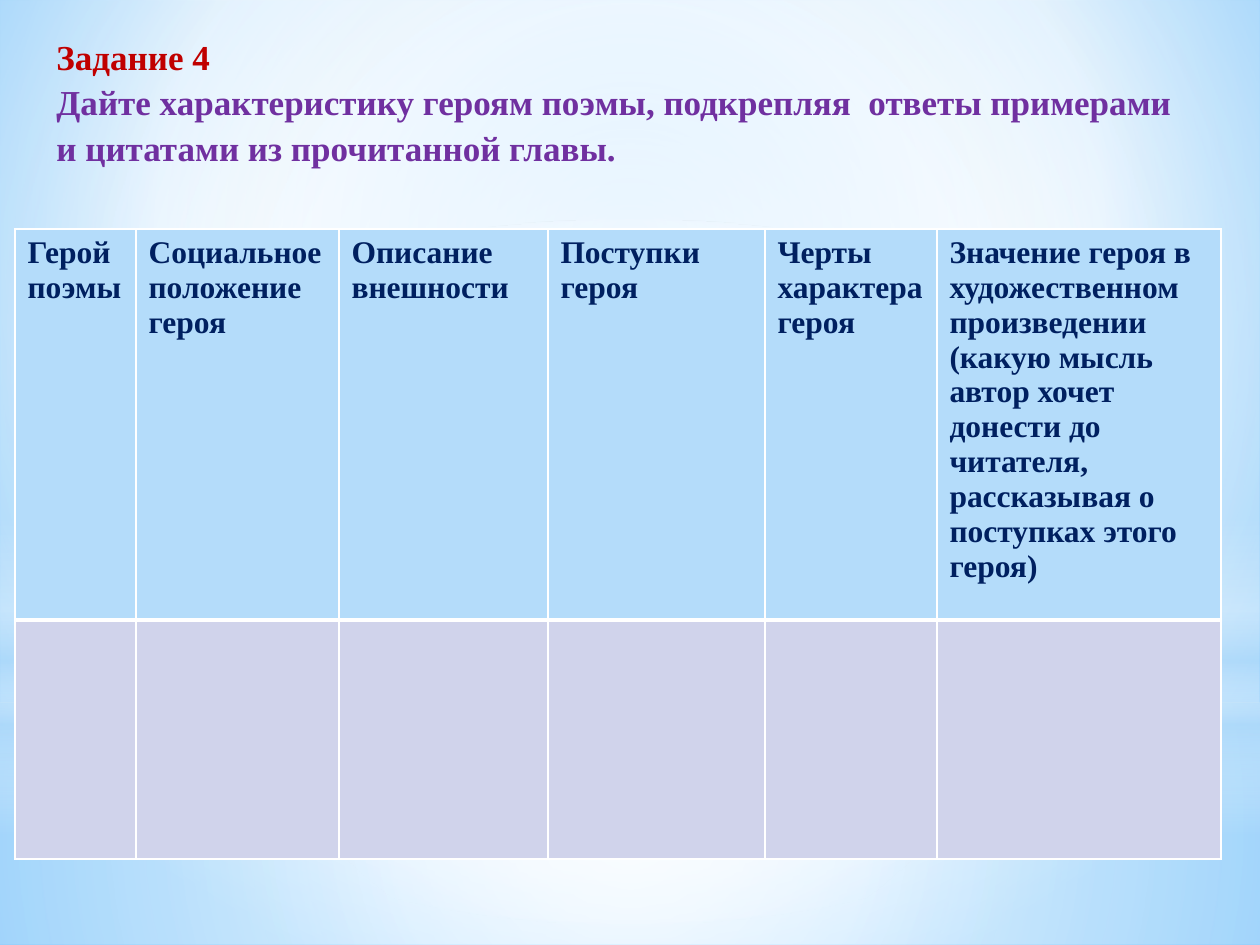
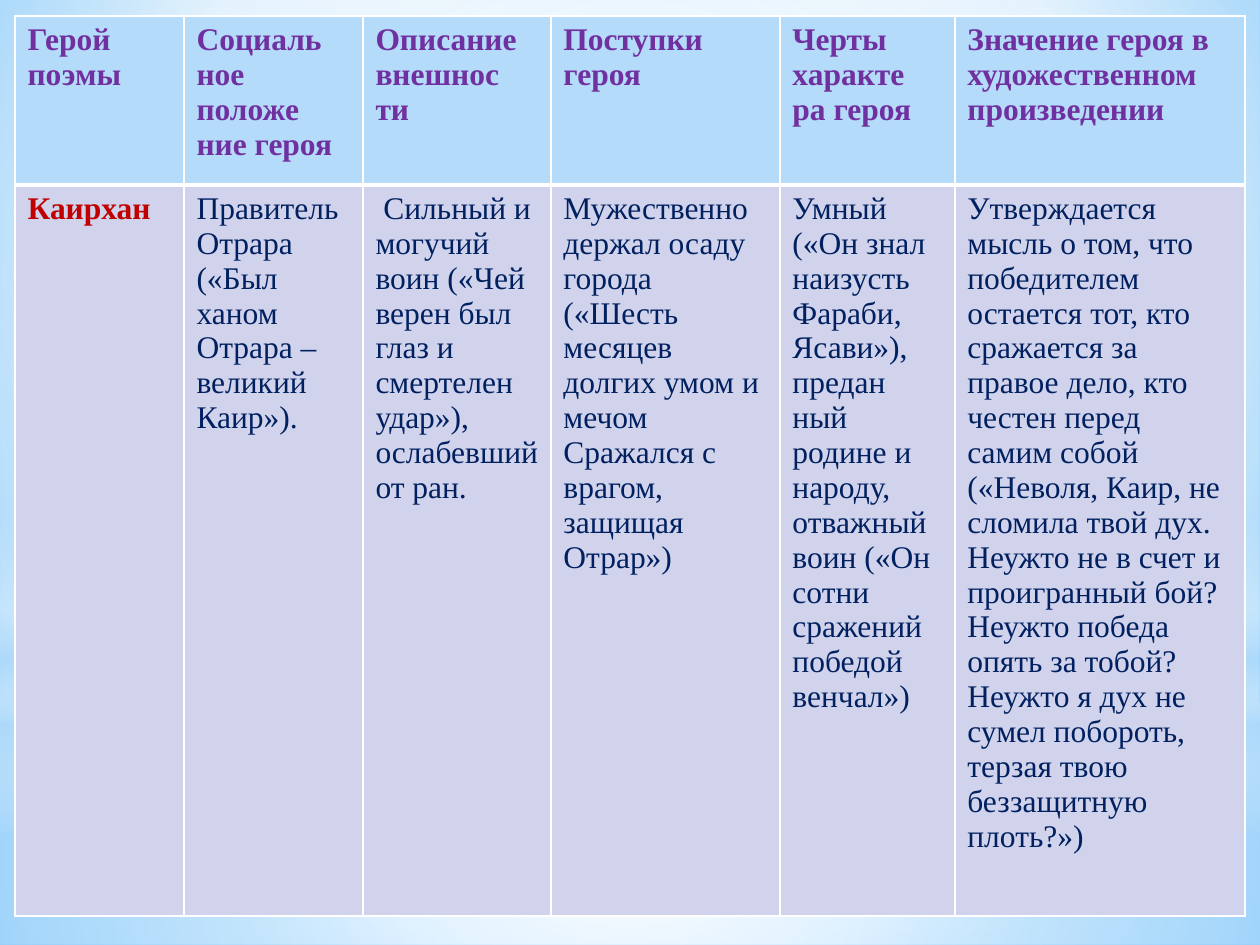
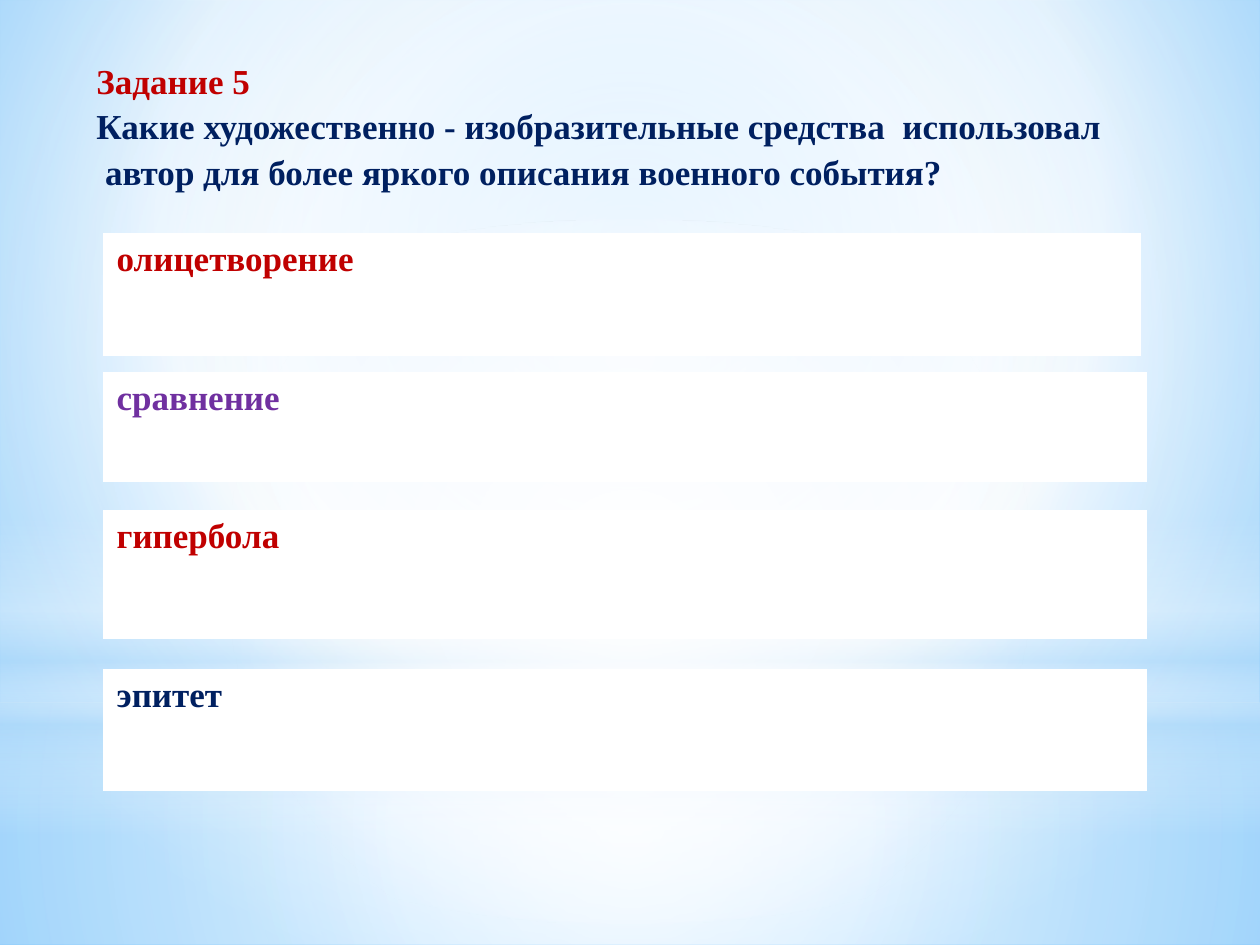
from dataclasses import dataclass
from typing import Optional

from lxml import etree
from pptx import Presentation
from pptx import util as u
from pptx.dml.color import RGBColor
from pptx.enum import shapes
from pptx.oxml import ns

PX_PER_INCH = 126


@dataclass(frozen=True)
class Theme:
    font: str = "Times New Roman"
    red: str = "C00000"
    purple: str = "7030A0"
    navy: str = "002060"
    white: str = "FFFFFF"
    sky: str = "B4DCFA"
    lilac: str = "D0D3EB"
    edge_blue: str = "9ED5FF"
    deep_blue: str = "5BB9FF"
    heading_size: int = 20
    cell_size: int = 18
    heading_spacing: float = 1.08
    thin: int = 1
    thick: int = 3


THEME = Theme()


@dataclass(frozen=True)
class Area:
    left: int
    top: int
    width: int
    height: int

    def emu(self) -> tuple[int, ...]:
        return tuple(px(n) for n in (self.left, self.top, self.width, self.height))


@dataclass(frozen=True)
class Stop:
    position: int
    color: str
    opacity: int = 100


@dataclass(frozen=True)
class Gradient:
    """A circular gradient around a focus (l, t, r, b in percent), or a vertical one."""
    stops: tuple[Stop, ...]
    focus: Optional[tuple[int, int, int, int]] = (50, 50, 50, 50)


@dataclass(frozen=True)
class Glow:
    kind: shapes.MSO_SHAPE
    area: Area
    gradient: Gradient


@dataclass(frozen=True)
class Passage:
    """Text in one style; each line is a paragraph."""
    words: str
    color: str
    bold: bool = True


@dataclass(frozen=True)
class Device:
    """A literary device with an empty field for the answer."""
    name: str
    color: str
    top: int
    height: int
    columns: tuple[int, int] = (521, 521)


WHITE, SKY = THEME.white, THEME.sky

BACKDROP = Gradient(
    (Stop(0, THEME.edge_blue), Stop(60, WHITE), Stop(100, THEME.deep_blue)),
    (20, 10, 20, 60))

GLOWS = (
    Glow(shapes.MSO_SHAPE.RECTANGLE, Area(0, 703, 1260, 242),
         Gradient((Stop(0, WHITE, 91), Stop(37, WHITE, 76), Stop(100, SKY, 79)))),
    Glow(shapes.MSO_SHAPE.RECTANGLE, Area(0, 0, 1260, 703),
         Gradient((Stop(0, WHITE, 89), Stop(48, WHITE, 62), Stop(100, SKY, 79)))),
    Glow(shapes.MSO_SHAPE.RECTANGLE, Area(0, 519, 1260, 315),
         Gradient((Stop(0, WHITE, 0), Stop(29, WHITE, 30), Stop(45, SKY, 40),
                   Stop(55, WHITE, 26), Stop(65, SKY, 60), Stop(100, WHITE, 0)), None)),
    Glow(shapes.MSO_SHAPE.OVAL, Area(0, 220, 1260, 703),
         Gradient((Stop(0, WHITE), Stop(56, WHITE, 0)))),
)

TASK_HEADERS = (
    "Герой поэмы",
    "Социальное положение героя",
    "Описание внешности",
    "Поступки героя",
    "Черты характера героя",
    "Значение героя в художественном произведении (какую мысль автор хочет "
    "донести до читателя, рассказывая о поступках этого героя)",
)

ANSWER_HEADERS = (
    "Герой поэмы",
    "Социаль\nное положе\nние героя",
    "Описание внешнос\nти",
    "Поступки героя",
    "Черты характе\nра героя",
    "Значение героя в художественном произведении",
)

HERO = "Каирхан"
HERO_ANSWERS = (
    "Правитель Отрара («Был ханом Отрара – великий Каир»).",
    " Сильный и могучий воин («Чей верен был глаз и смертелен удар»), "
    "ослабевший от ран.",
    "Мужественно держал осаду города («Шесть месяцев долгих умом и мечом "
    "Сражался с врагом, защищая Отрар»)",
    "Умный («Он знал наизусть Фараби, Ясави»), предан\n"
    "ный родине и народу, отважный воин («Он сотни сражений победой венчал»)",
    "Утверждается мысль о том, что победителем остается тот, кто сражается за "
    "правое дело, кто честен перед самим собой («Неволя, Каир, не сломила твой "
    "дух. Неужто не в счет и проигранный бой? Неужто победа опять за тобой? "
    "Неужто я дух не сумел побороть, терзая твою беззащитную плоть?»)",
)

DEVICES = (
    Device("олицетворение", THEME.red, 234, 120, (533, 503)),
    Device("сравнение", THEME.purple, 373, 107),
    Device("гипербола", THEME.red, 511, 126),
    Device("эпитет", THEME.navy, 670, 119),
)


def px(length: int) -> int:
    return round(length * u.Inches(1) / PX_PER_INCH)


def add_child(parent, tag: str, **attributes):
    return etree.SubElement(parent, ns.qn(tag),
                            {key: str(value) for key, value in attributes.items()})


def paint_gradient(holder, gradient: Gradient) -> None:
    """Replace the solid fill inside holder by the gradient."""
    fill = etree.Element(ns.qn("a:gradFill"), rotWithShape="1")
    stops = add_child(fill, "a:gsLst")
    for stop in gradient.stops:
        mark = add_child(stops, "a:gs", pos=stop.position * 1000)
        color = add_child(mark, "a:srgbClr", val=stop.color)
        if stop.opacity < 100:
            add_child(color, "a:alpha", val=stop.opacity * 1000)
    if gradient.focus:
        course = add_child(fill, "a:path", path="circle")
        sides = {side: part * 1000 for side, part in zip("ltrb", gradient.focus)}
        add_child(course, "a:fillToRect", **sides)
    else:
        add_child(fill, "a:lin", ang=90 * 60000, scaled=0)
    holder.replace(holder.find(ns.qn("a:solidFill")), fill)


def prepare_layout(deck):
    """Give the blank layout the backdrop and its glows."""
    layout = deck.slide_layouts[6]
    for placeholder in list(layout.placeholders):
        layout.element.cSld.spTree.remove(placeholder.element)
    layout.background.fill.solid()
    paint_gradient(layout.element.find(f".//{ns.qn('p:bgPr')}"), BACKDROP)
    return layout


def add_glows(page, layout) -> None:
    """Draw the glows on a page and hand them over to the layout."""
    for glow in GLOWS:
        shape = page.shapes.add_shape(glow.kind, *glow.area.emu())
        shape.shadow.inherit = False
        shape.line.fill.background()
        shape.fill.solid()
        paint_gradient(shape.element.spPr, glow.gradient)
        layout.element.cSld.spTree.append(shape.element)


def write(frame, passages: tuple[Passage, ...], size: int,
          spacing: Optional[float] = None) -> None:
    frame.word_wrap = True
    lines = [(line, passage) for passage in passages
             for line in passage.words.split("\n")]
    for index, (line, passage) in enumerate(lines):
        para = frame.add_paragraph() if index else frame.paragraphs[0]
        if spacing:
            para.line_spacing = spacing
        span = para.add_run()
        span.text = line
        span.font.name = THEME.font
        span.font.size = u.Pt(size)
        span.font.bold = passage.bold
        span.font.color.rgb = RGBColor.from_string(passage.color)


def add_heading(page, area: Area, *passages: Passage) -> None:
    box = page.shapes.add_textbox(*area.emu())
    write(box.text_frame, passages, THEME.heading_size, THEME.heading_spacing)


def add_borders(cell, is_header: bool) -> None:
    """Thin white borders, with a thick one under the header."""
    widths = {"L": THEME.thin, "R": THEME.thin}
    if is_header:
        widths["T"] = THEME.thin
    widths["B"] = THEME.thick if is_header else THEME.thin
    properties = cell._tc.get_or_add_tcPr()
    for side, width in widths.items():
        line = add_child(properties, f"a:ln{side}", w=u.Pt(width))
        add_child(add_child(line, "a:solidFill"), "a:srgbClr", val=THEME.white)


def add_grid(page, left: int, top: int, columns: tuple[int, ...],
             heights: tuple[int, ...], rows: tuple[tuple[Optional[Passage], ...], ...],
             fills: tuple[str, ...], size: int) -> None:
    area = Area(left, top, sum(columns), sum(heights))
    table = page.shapes.add_table(len(heights), len(columns), *area.emu()).table
    table.horz_banding = False
    for column, width in zip(table.columns, columns):
        column.width = px(width)
    for index, (row, height) in enumerate(zip(table.rows, heights)):
        row.height = px(height)
        for cell, passage in zip(row.cells, rows[index]):
            add_borders(cell, index == 0)
            cell.fill.solid()
            cell.fill.fore_color.rgb = RGBColor.from_string(fills[index])
            if passage:
                write(cell.text_frame, (passage,), size)


def add_hero_table(page, top: int, columns: tuple[int, ...], heights: tuple[int, int],
                   headers: tuple[Passage, ...],
                   answers: tuple[Optional[Passage], ...]) -> None:
    add_grid(page, 15, top, columns, heights, (headers, answers),
             (THEME.sky, THEME.lilac), THEME.cell_size)


def fill_task_four(page) -> None:
    add_heading(
        page, Area(44, 26, 1150, 183),
        Passage("Задание 4", THEME.red),
        Passage("Дайте характеристику героям поэмы, подкрепляя  ответы примерами "
                "и цитатами из прочитанной главы.", THEME.purple))
    headers = tuple(Passage(words, THEME.navy) for words in TASK_HEADERS)
    add_hero_table(page, 229, (121, 203, 209, 217, 172, 284), (391, 239),
                   headers, (None,) * len(headers))


def fill_hero_answers(page) -> None:
    headers = tuple(Passage(words, THEME.purple) for words in ANSWER_HEADERS)
    answers = tuple(Passage(words, THEME.navy, False) for words in HERO_ANSWERS)
    add_hero_table(page, 16, (169, 179, 188, 229, 175, 290), (169, 730),
                   headers, (Passage(HERO, THEME.red), *answers))


def fill_task_five(page) -> None:
    add_heading(
        page, Area(84, 50, 1041, 378),
        Passage("Задание 5", THEME.red),
        Passage("Какие художественно - изобразительные средства  использовал\n"
                " автор для более яркого описания военного события?", THEME.navy))
    for device in DEVICES:
        add_grid(page, 104, device.top, device.columns, (device.height,),
                 ((Passage(device.name, device.color), None),),
                 (THEME.white,), THEME.heading_size)


def main() -> None:
    deck = Presentation()
    deck.slide_width, deck.slide_height = px(1260), px(945)
    layout = prepare_layout(deck)
    fillers = (fill_task_four, fill_hero_answers, fill_task_five)
    pages = [deck.slides.add_slide(layout) for _ in fillers]
    add_glows(pages[0], layout)
    for fill_page, page in zip(fillers, pages):
        fill_page(page)
    deck.save("out.pptx")


if __name__ == "__main__":
    main()
